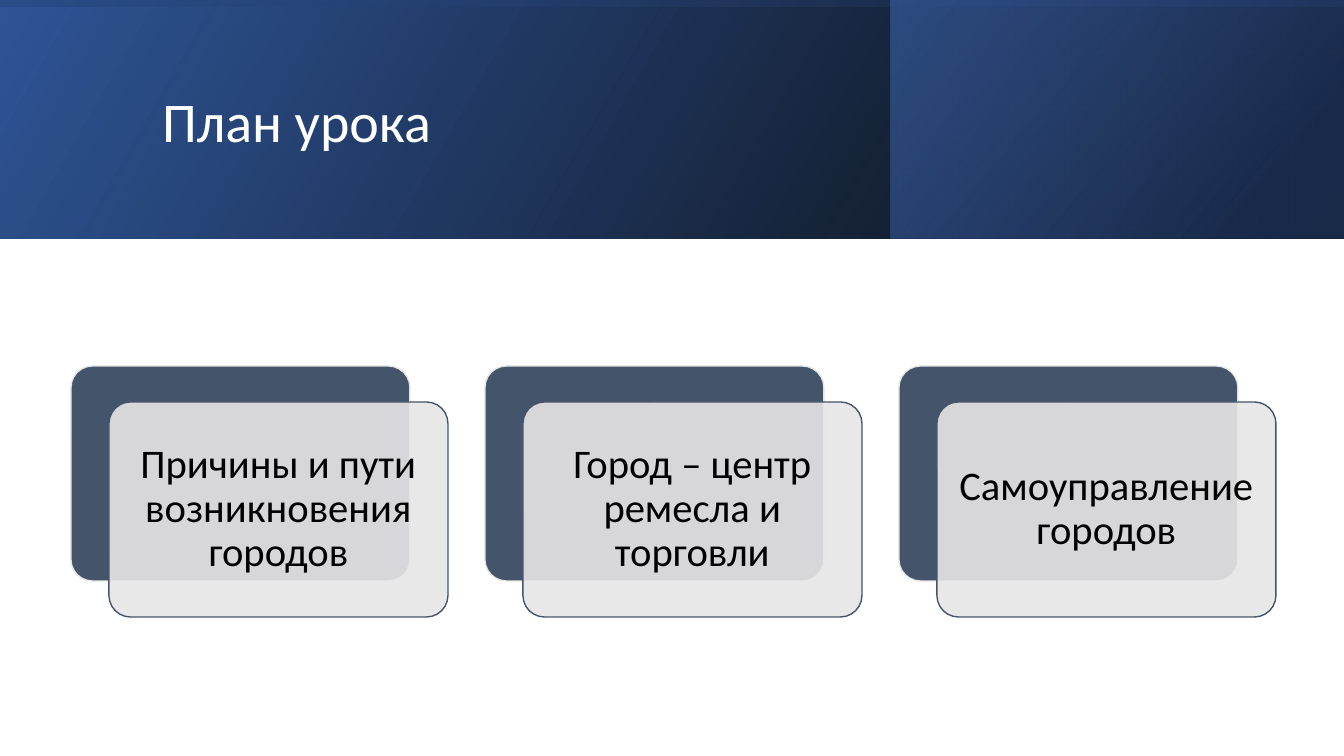
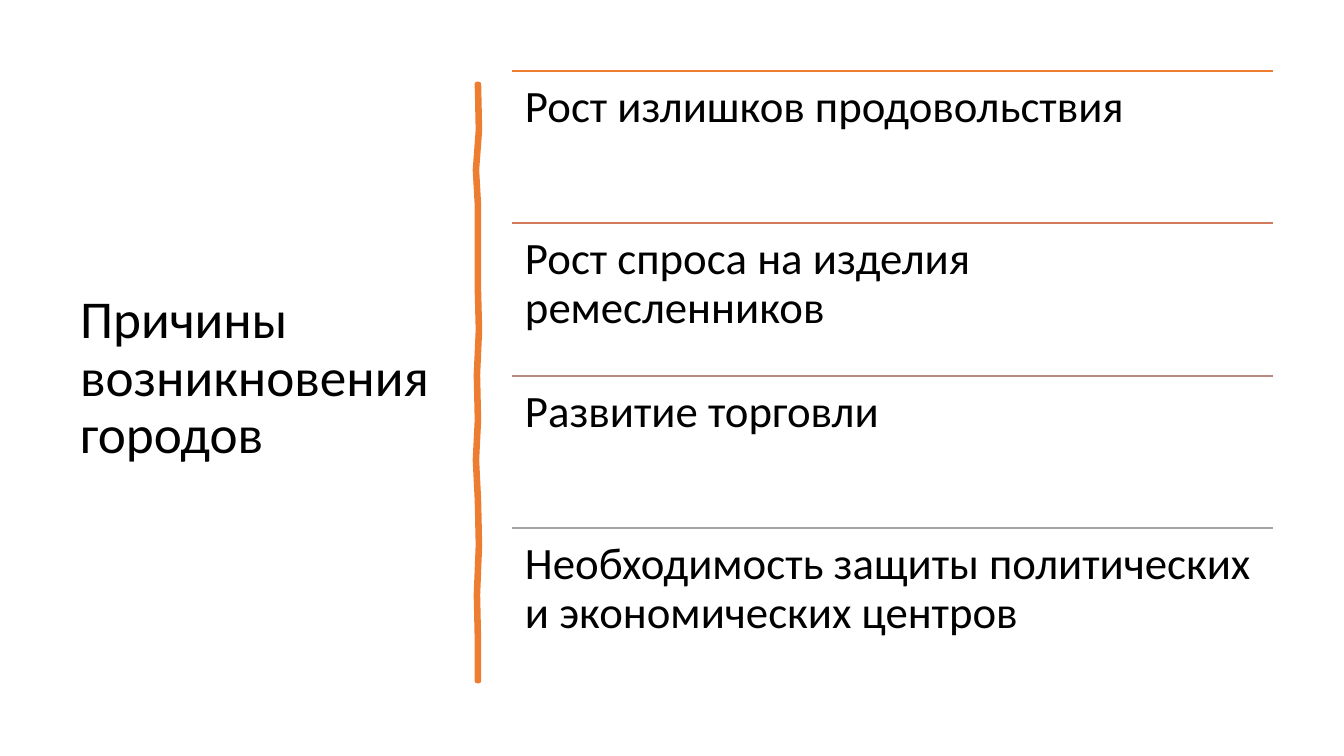
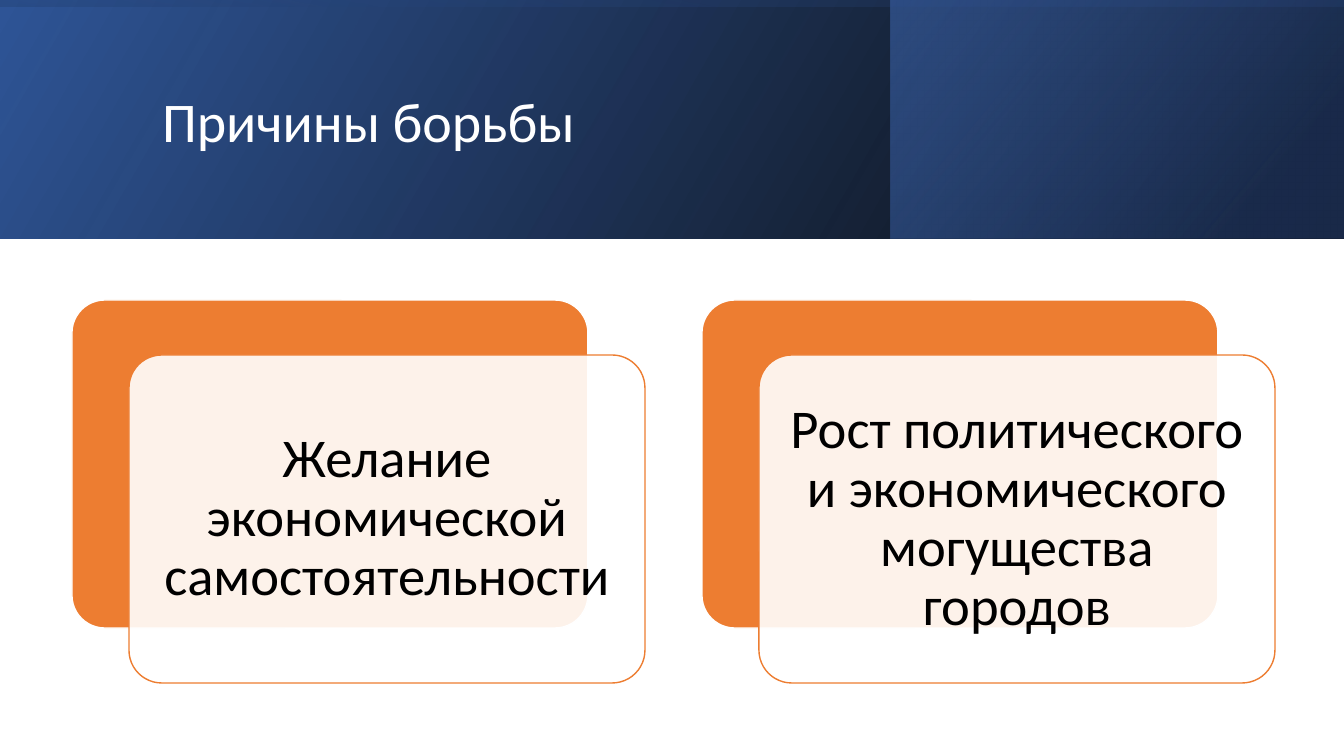
from lxml import etree
from pptx import Presentation
from pptx import util as u
from pptx.dml.color import RGBColor
from pptx.enum import shapes, text
from pptx.oxml.ns import qn

EMU_PER_PX = 914400 / 100.8
SLIDE_WIDTH, SLIDE_HEIGHT = 1344, 756
FONT = "Calibri"

BLACK = RGBColor(0x00, 0x00, 0x00)
WHITE = RGBColor(0xFF, 0xFF, 0xFF)
BLUE = RGBColor(0x2F, 0x55, 0x97)
NAVY = RGBColor(0x20, 0x38, 0x64)
SKY = RGBColor(0x44, 0x72, 0xC4)
SLATE = RGBColor(0x44, 0x54, 0x6A)
PALE = RGBColor(0xE7, 0xE6, 0xE6)
ORANGE = RGBColor(0xED, 0x7D, 0x31)
DIVIDERS = (ORANGE, RGBColor(0xD1, 0x7B, 0x5C),
            RGBColor(0xB9, 0x8A, 0x82), RGBColor(0xA5, 0xA5, 0xA5))

# Header layers: left, width, clockwise angle, stops (position, colour, opacity)
HEADER_HEIGHT = 239
HEADER_LAYERS = (
    (0, SLIDE_WIDTH, 210, ((0, BLACK, 96), (100, BLUE, 100))),
    (891, 453, 220, ((19, NAVY, 68), (100, SKY, 48))),
    (0, SLIDE_WIDTH, 100, ((23, BLUE, 16), (99, BLACK, 45))),
)

# Centre line of the hand-drawn bar: (x, y)
BAR_CENTRE = ((478, 84), (479, 130), (476, 170), (478, 205), (478, 290),
              (479, 330), (477, 375), (478, 420), (476, 460), (478, 500),
              (479, 545), (477, 595), (478, 640), (478, 681))


def px(length):
    return u.Emu(round(length * EMU_PER_PX))


def box(left, top, width, height):
    return px(left), px(top), px(width), px(height)


def set_opacity(colour_parent, percent):
    """Set the opacity of the RGB colour inside an XML element."""
    colour = next(colour_parent.iter(qn("a:srgbClr")))
    etree.SubElement(colour, qn("a:alpha")).set("val", str(percent * 1000))


def write(frame, words, size, colour=BLACK, align=text.PP_ALIGN.LEFT,
          anchor=text.MSO_ANCHOR.MIDDLE, inset=None):
    frame.word_wrap = True
    frame.auto_size = text.MSO_AUTO_SIZE.NONE
    frame.vertical_anchor = anchor
    if inset is not None:
        frame.margin_left = frame.margin_right = px(inset)
        frame.margin_top = frame.margin_bottom = px(inset)
    paragraph = frame.paragraphs[0]
    paragraph.alignment = align
    paragraph.line_spacing = 0.9
    run = paragraph.add_run()
    run.text = words
    run.font.name = FONT
    run.font.size = u.Pt(size)
    run.font.color.rgb = colour


def add_title(slide, words, place, size, colour=BLACK):
    title = slide.shapes.title
    title.left, title.top, title.width, title.height = box(*place)
    write(title.text_frame, words, size, colour=colour)


def add_header(slide, words):
    for left, width, angle, stops in HEADER_LAYERS:
        layer = slide.shapes.add_shape(
            shapes.MSO_SHAPE.RECTANGLE, *box(left, 0, width, HEADER_HEIGHT))
        layer.shadow.inherit = False
        layer.line.fill.background()
        layer.fill.gradient()
        layer.fill.gradient_angle = 360 - angle
        for stop, (position, colour, opacity) in zip(
                layer.fill.gradient_stops, stops):
            stop.position = position / 100
            stop.color.rgb = colour
        gradient = layer.fill._xPr.find(qn("a:gradFill"))
        for element, (_, _, opacity) in zip(gradient.iter(qn("a:gs")), stops):
            set_opacity(element, opacity)
    add_title(slide, words, (152, 38, 1072, 173), 40, colour=WHITE)
    # The title goes in front of the header layers
    slide.shapes._spTree.append(slide.shapes.title._element)


def add_panel(slide, place, fill, line):
    panel = slide.shapes.add_shape(
        shapes.MSO_SHAPE.ROUNDED_RECTANGLE, *box(*place))
    panel.adjustments[0] = 0.1
    panel.shadow.inherit = False
    panel.fill.solid()
    panel.fill.fore_color.rgb = fill
    panel.line.color.rgb = line
    panel.line.width = u.Pt(1)
    return panel


def add_cards(slide, labels, place, pitch, offset, strong, pale, size, inset):
    """Place a row of cards, each a strong panel under a translucent one."""
    left, top, width, height = place
    shift_x, shift_y = offset
    for index, label in enumerate(labels):
        x = left + index * pitch
        add_panel(slide, (x, top, width, height), strong, pale)
        front = add_panel(slide, (x + shift_x, top + shift_y, width, height),
                          pale, strong)
        set_opacity(front.fill._xPr.find(qn("a:solidFill")), 90)
        write(front.text_frame, label, size, align=text.PP_ALIGN.CENTER,
              inset=inset)


def add_bar(slide):
    right_edge = [(x + 1, y) for x, y in BAR_CENTRE]
    left_edge = [(x - 1, y) for x, y in reversed(BAR_CENTRE)]
    outline = right_edge + left_edge
    builder = slide.shapes.build_freeform(*outline[0], scale=EMU_PER_PX)
    builder.add_line_segments(outline[1:], close=True)
    bar = builder.convert_to_shape()
    bar.shadow.inherit = False
    bar.fill.solid()
    bar.fill.fore_color.rgb = ORANGE
    bar.line.color.rgb = ORANGE
    bar.line.width = u.Pt(3.25)


def add_reasons(slide, reasons):
    left, top, width, height = 512, 71, 761, 610
    row_height = height // len(reasons)
    for index, (reason, colour) in enumerate(zip(reasons, DIVIDERS)):
        y = top + index * height // len(reasons)
        divider = slide.shapes.add_connector(
            shapes.MSO_CONNECTOR.STRAIGHT,
            px(left), px(y), px(left + width), px(y))
        divider.line.color.rgb = colour
        divider.line.width = u.Pt(1)
        etree.SubElement(divider._element.spPr, qn("a:effectLst"))
        row = slide.shapes.add_textbox(*box(left, y, width, row_height))
        write(row.text_frame, reason, 32, anchor=text.MSO_ANCHOR.TOP, inset=13)


def main():
    deck = Presentation()
    deck.slide_width, deck.slide_height = px(SLIDE_WIDTH), px(SLIDE_HEIGHT)
    title_only = deck.slide_layouts[5]

    # Lesson plan
    plan = deck.slides.add_slide(title_only)
    add_header(plan, "План урока")
    add_cards(plan,
              ("Причины и пути возникновения городов",
               "Город – центр ремесла и торговли",
               "Самоуправление городов"),
              place=(71, 366, 339, 215), pitch=414, offset=(38, 36),
              strong=SLATE, pale=PALE, size=29, inset=12)

    # Why towns appeared
    origins = deck.slides.add_slide(title_only)
    add_title(origins, "Причины возникновения городов", (70, 71, 377, 616), 38)
    add_bar(origins)
    add_reasons(origins,
                ("Рост излишков продовольствия",
                 "Рост спроса на изделия ремесленников",
                 "Развитие торговли",
                 "Необходимость защиты политических и экономических центров"))

    # Why towns fought
    struggle = deck.slides.add_slide(title_only)
    add_header(struggle, "Причины борьбы")
    add_cards(struggle,
              ("Желание экономической самостоятельности",
               "Рост политического и экономического могущества городов"),
              place=(72, 300, 516, 328), pitch=630, offset=(57, 55),
              strong=ORANGE, pale=WHITE, size=39, inset=16)

    deck.save("out.pptx")


if __name__ == "__main__":
    main()
